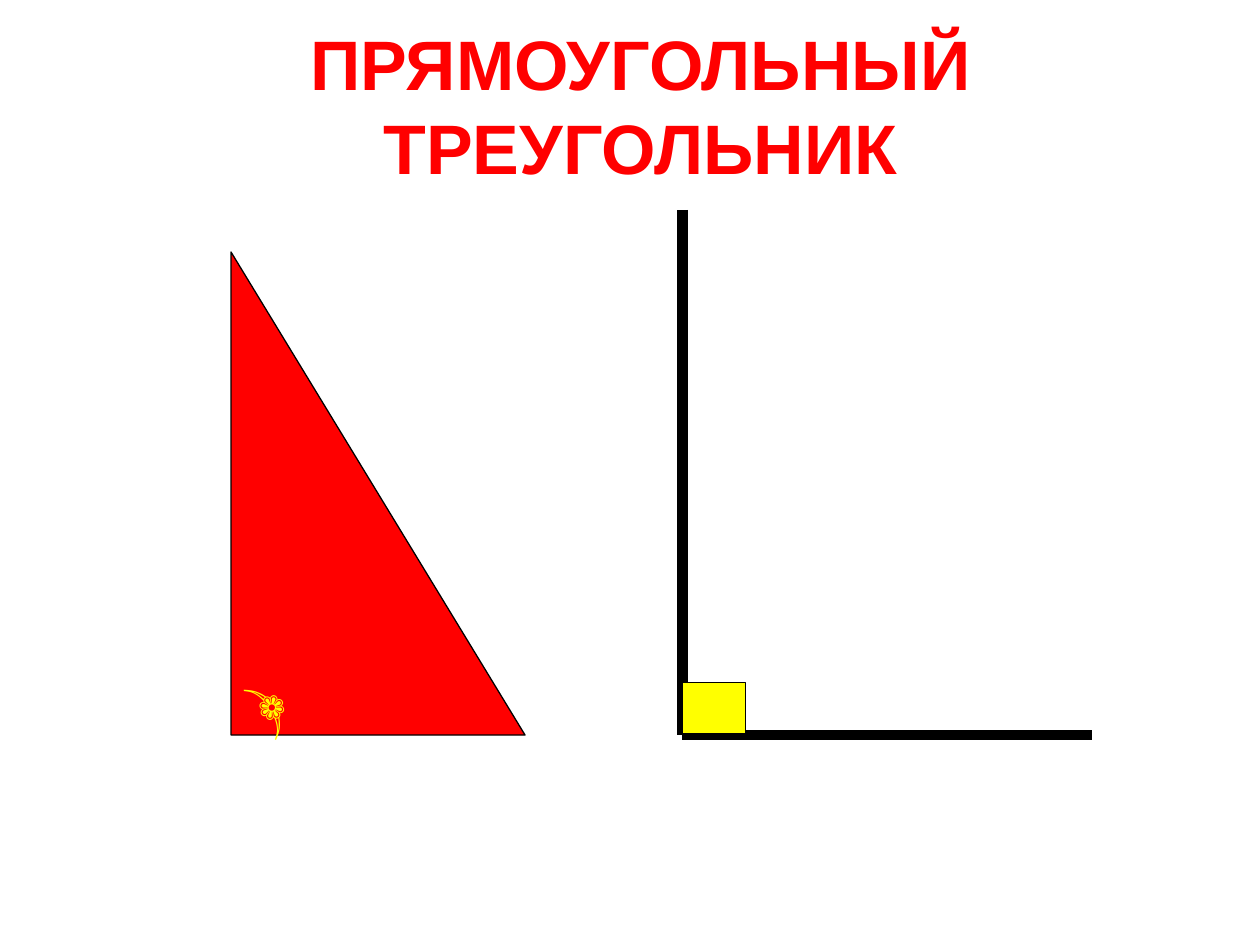
from lxml import etree
from pptx import Presentation
from pptx.dml.color import RGBColor
from pptx.enum.shapes import MSO_CONNECTOR as Connector, MSO_SHAPE as Shape
from pptx.enum.text import MSO_ANCHOR as Anchor, PP_ALIGN as Align
from pptx.oxml.ns import qn
from pptx.util import Pt

RED = RGBColor(255, 0, 0)
YELLOW = RGBColor(255, 255, 0)
BLACK = RGBColor(0, 0, 0)


class SlideBuilder:
    font_name = "Arial"
    font_size = 40
    outline_width = 0.75
    ray_width = 6

    def __init__(self, slide):
        self.slide = slide

    def text(self, text, box, color, align=Align.LEFT, anchor=Anchor.TOP, rotation=0):
        shape = self.slide.shapes.add_textbox(*map(Pt, box))
        shape.rotation = rotation
        frame = shape.text_frame
        frame.word_wrap = True
        frame.vertical_anchor = anchor
        paragraph = frame.paragraphs[0]
        paragraph.text = text
        paragraph.alignment = align
        font = paragraph.font
        font.name = self.font_name
        font.size = Pt(self.font_size)
        font.bold = True
        font.color.rgb = color

    def figure(self, kind, box, fill):
        shape = self.slide.shapes.add_shape(kind, *map(Pt, box))
        shape.shadow.inherit = False
        shape.fill.solid()
        shape.fill.fore_color.rgb = fill
        shape.line.color.rgb = BLACK
        shape.line.width = Pt(self.outline_width)

    def ray(self, start, end):
        connector = self.slide.shapes.add_connector(
            Connector.STRAIGHT, *map(Pt, (*start, *end))
        )
        connector.line.color.rgb = BLACK
        connector.line.width = Pt(self.ray_width)
        etree.SubElement(connector._element.spPr, qn("a:effectLst"))


def main():
    presentation = Presentation()
    presentation.slide_width = Pt(720)
    presentation.slide_height = Pt(540)
    builder = SlideBuilder(presentation.slides.add_slide(presentation.slide_layouts[6]))

    builder.text("ПРЯМОУГОЛЬНЫЙ ТРЕУГОЛЬНИК", (42, 24, 648, 72), RED,
                 Align.CENTER, Anchor.MIDDLE)
    builder.figure(Shape.RIGHT_TRIANGLE, (132, 144, 168, 276), RED)

    vertex = (390, 420)
    for start, end in (((390, 120), vertex), (vertex, (624, 420))):
        builder.ray(start, end)

    builder.text("﴿", (132, 360, 78, 55.4), YELLOW, rotation=327.3)
    builder.figure(Shape.RECTANGLE, (390, 390, 36, 29.5), YELLOW)

    presentation.save("out.pptx")


if __name__ == "__main__":
    main()
